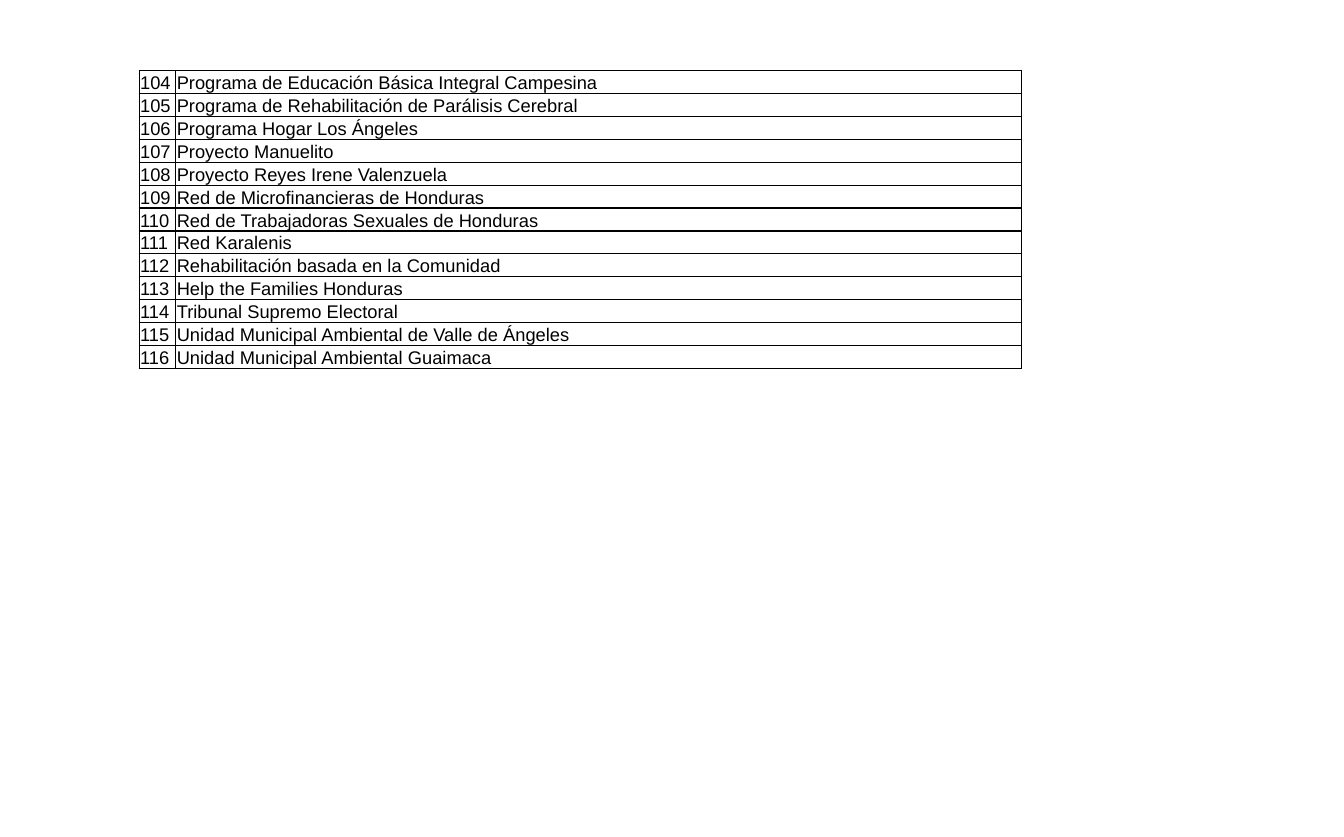
from dataclasses import dataclass

from lxml import etree
from pptx import Presentation
from pptx.dml.color import RGBColor
from pptx.enum.text import MSO_ANCHOR
from pptx.oxml.ns import qn
from pptx.table import _Cell
from pptx.util import Inches, Pt

BLACK = "000000"
FIRST_NUMBER = 104
ORGANIZATIONS = [
    "Programa de Educación Básica Integral Campesina",
    "Programa de Rehabilitación de Parálisis Cerebral",
    "Programa Hogar Los Ángeles",
    "Proyecto Manuelito",
    "Proyecto Reyes Irene Valenzuela",
    "Red de Microfinancieras de Honduras",
    "Red de Trabajadoras Sexuales de Honduras",
    "Red Karalenis",
    "Rehabilitación basada en la Comunidad",
    "Help the Families Honduras",
    "Tribunal Supremo Electoral",
    "Unidad Municipal Ambiental de Valle de Ángeles",
    "Unidad Municipal Ambiental Guaimaca",
]


@dataclass(frozen=True)
class Column:
    width: float
    anchor: MSO_ANCHOR
    texts: list[str]


COLUMNS = [
    Column(0.39, MSO_ANCHOR.BOTTOM,
           [str(n) for n in range(FIRST_NUMBER, FIRST_NUMBER + len(ORGANIZATIONS))]),
    Column(8.99, MSO_ANCHOR.TOP, ORGANIZATIONS),
]


def color(value: str) -> RGBColor:
    return RGBColor.from_string(value)


def add_borders(cell: _Cell, width: float = 1, line: str = BLACK) -> None:
    tc_pr = cell._tc.get_or_add_tcPr()
    for i, side in enumerate(("lnL", "lnR", "lnT", "lnB")):
        ln = etree.Element(qn(f"a:{side}"), w=str(Pt(width)))
        fill = etree.SubElement(ln, qn("a:solidFill"))
        etree.SubElement(fill, qn("a:srgbClr"), val=line)
        tc_pr.insert(i, ln)


def write_cell(cell: _Cell, text: str, *, anchor: MSO_ANCHOR, size: float = 14,
               font: str = "Arial", ink: str = BLACK) -> None:
    cell.vertical_anchor = anchor
    cell.margin_left = cell.margin_right = cell.margin_top = Inches(0.01)
    cell.margin_bottom = Inches(0)
    p = cell.text_frame.paragraphs[0]
    p.line_spacing = 1.07
    p.space_after = Pt(8)
    r = p.add_run()
    r.text = text
    r.font.name = font
    r.font.size = Pt(size)
    r.font.color.rgb = color(ink)


def main() -> None:
    prs = Presentation()
    prs.slide_width, prs.slide_height = Inches(14.29), Inches(8.9)
    s = prs.slides.add_slide(prs.slide_layouts[6])
    width = sum(column.width for column in COLUMNS)
    table = s.shapes.add_table(len(ORGANIZATIONS), len(COLUMNS), Inches(1.48),
                               Inches(0.75), Inches(width), Inches(3.1)).table
    table.first_row = table.horz_banding = False
    for c, column in enumerate(COLUMNS):
        table.columns[c].width = Inches(column.width)
        for row, text in enumerate(column.texts):
            cell = table.cell(row, c)
            write_cell(cell, text, anchor=column.anchor)
            cell.fill.background()
            add_borders(cell)
    prs.save("out.pptx")


if __name__ == "__main__":
    main()
